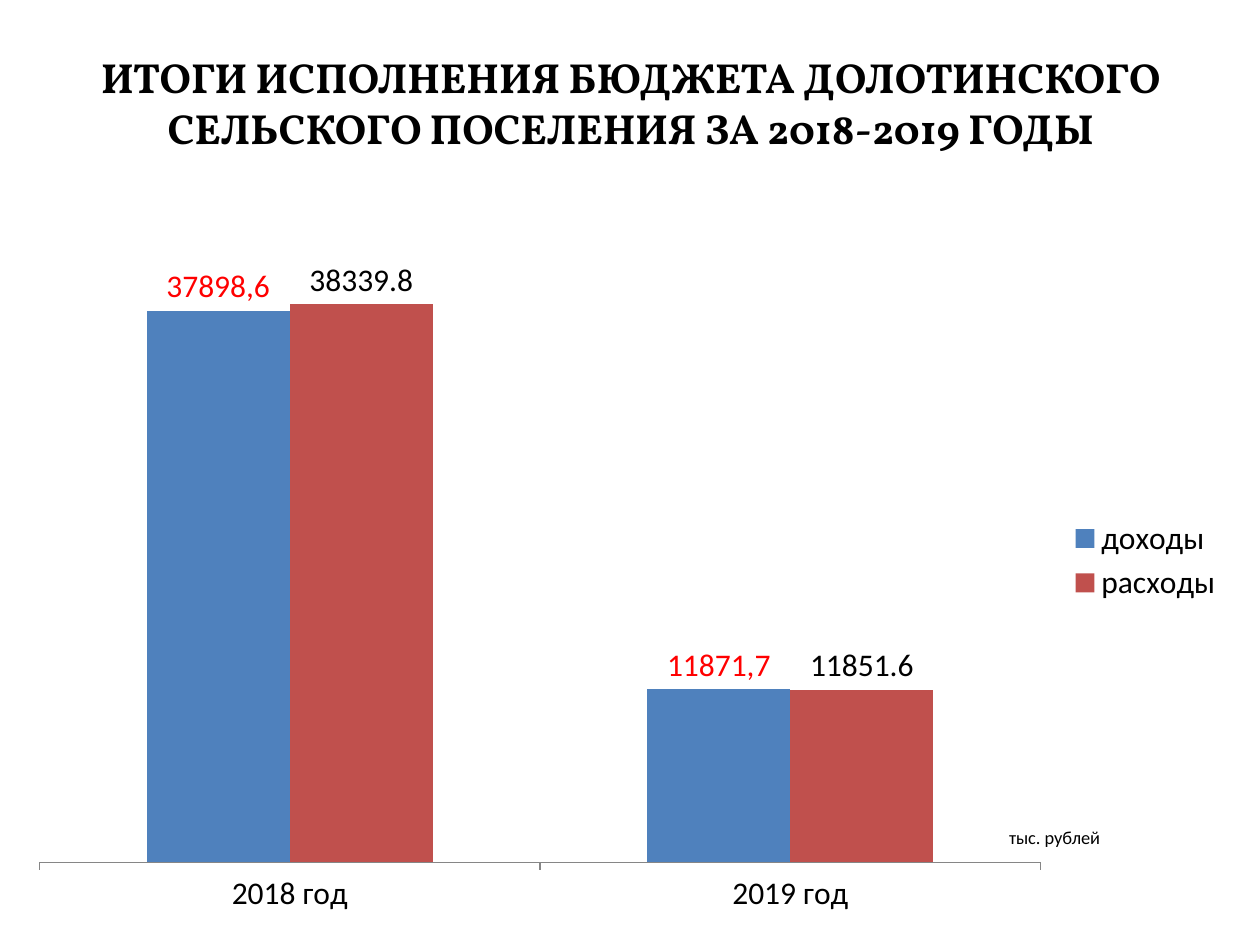
from lxml import etree
from pptx import Presentation
from pptx.chart.data import CategoryChartData
from pptx.dml.color import RGBColor
from pptx.enum.chart import XL_CHART_TYPE, XL_LABEL_POSITION, XL_LEGEND_POSITION, XL_TICK_MARK
from pptx.enum.text import MSO_ANCHOR, PP_ALIGN
from pptx.oxml.ns import qn
from pptx.util import Inches, Pt

CLUSTERED = XL_CHART_TYPE.COLUMN_CLUSTERED
OUTSIDE_END = XL_LABEL_POSITION.OUTSIDE_END
LEGEND_RIGHT = XL_LEGEND_POSITION.RIGHT
TICK_OUTSIDE = XL_TICK_MARK.OUTSIDE
TICK_NONE = XL_TICK_MARK.NONE
TOP = MSO_ANCHOR.TOP
LEFT, CENTER = PP_ALIGN.LEFT, PP_ALIGN.CENTER

BLACK = RGBColor(0x00, 0x00, 0x00)
RED = RGBColor(0xFF, 0x00, 0x00)
BLUE = RGBColor(0x4F, 0x81, 0xBD)
BRICK = RGBColor(0xC0, 0x50, 0x4D)
GRAY = RGBColor(0x86, 0x86, 0x86)

TITLE_FONT = {"name": "Vollkorn", "size": Pt(24), "bold": True}
CHART_FONT = {"name": "Calibri", "size": Pt(18), "bold": False}
UNIT_FONT = {"name": "Calibri", "size": Pt(10.5), "bold": False}

YEARS = ["2018 год", "2019 год"]
# name, values, bar colour, label colour, label texts
SERIES = [
    ("доходы", (37898.6, 11871.7), BLUE, RED, ("37898,6", "11871,7")),
    ("расходы", (38339.8, 11851.6), BRICK, BLACK, ()),
]
PLOT_LAYOUT = {"x": 0.02, "y": 0.02, "w": 0.82, "h": 0.89}


def format_font(font, values, color):
    for name, value in values.items():
        setattr(font, name, value)
    font.color.rgb = color


def write_text(shape, text, font_values, alignment):
    frame = shape.text_frame
    frame.word_wrap = True
    frame.vertical_anchor = TOP
    paragraph = frame.paragraphs[0]
    paragraph.alignment = alignment
    run = paragraph.add_run()
    run.text = text
    format_font(run.font, font_values, BLACK)


def add_title(slide, box):
    title = slide.shapes.title
    title.left, title.top, title.width, title.height = box
    write_text(title, "ИТОГИ ИСПОЛНЕНИЯ БЮДЖЕТА ДОЛОТИНСКОГО СЕЛЬСКОГО ПОСЕЛЕНИЯ "
               "ЗА 2018-2019 ГОДЫ", TITLE_FONT, CENTER)


def set_plot_layout(chart, layout_values):
    plot_area = chart.plots[0]._element.getparent()
    for old_layout in plot_area.findall(qn("c:layout")):
        plot_area.remove(old_layout)
    layout = etree.Element(qn("c:layout"))
    plot_area.insert(0, layout)
    manual = etree.SubElement(layout, qn("c:manualLayout"))
    settings = {"layoutTarget": "inner", "xMode": "edge", "yMode": "edge", **layout_values}
    for name, value in settings.items():
        etree.SubElement(manual, qn(f"c:{name}")).set("val", str(value))


def format_series(series, bar_color, label_color, label_texts):
    series.format.fill.solid()
    series.format.fill.fore_color.rgb = bar_color
    labels = series.data_labels
    labels.show_value = True
    labels.number_format = "0.0"
    labels.number_format_is_linked = False
    labels.position = OUTSIDE_END
    format_font(labels.font, CHART_FONT, label_color)
    for index, text in enumerate(label_texts):
        label = series.points[index].data_label
        run = label.text_frame.paragraphs[0].add_run()
        run.text = text
        format_font(run.font, CHART_FONT, label_color)
        label.position = OUTSIDE_END


def add_budget_chart(slide, box):
    data = CategoryChartData(number_format="0.0")
    data.categories = YEARS
    for name, values, *_ in SERIES:
        data.add_series(name, values)
    chart = slide.shapes.add_chart(CLUSTERED, *box, data).chart
    chart.has_title = False
    format_font(chart.font, CHART_FONT, BLACK)

    # Bars and their labels
    plot = chart.plots[0]
    plot.vary_by_categories = False
    plot.gap_width = 150
    plot.overlap = 0
    for series, (_, _, *formats) in zip(plot.series, SERIES):
        format_series(series, *formats)
    set_plot_layout(chart, PLOT_LAYOUT)

    # Axes
    category_axis = chart.category_axis
    category_axis.major_tick_mark = TICK_OUTSIDE
    category_axis.minor_tick_mark = TICK_NONE
    category_axis.format.line.color.rgb = GRAY
    value_axis = chart.value_axis
    value_axis.minimum_scale = 0
    value_axis.maximum_scale = 45000
    value_axis.has_major_gridlines = False
    value_axis.visible = False

    # Legend
    chart.has_legend = True
    chart.legend.position = LEGEND_RIGHT
    chart.legend.include_in_layout = False


def add_unit_note(slide, box):
    write_text(slide.shapes.add_textbox(*box), "тыс. рублей", UNIT_FONT, LEFT)


def box_in_inches(*lengths):
    return [Inches(length) for length in lengths]


def main():
    presentation = Presentation()
    presentation.slide_width = Inches(10)
    presentation.slide_height = Inches(7.5)
    slide = presentation.slides.add_slide(presentation.slide_layouts[5])
    add_title(slide, box_in_inches(0.44, 0.36, 9.13, 1.31))
    add_budget_chart(slide, box_in_inches(0.12, 1.53, 9.69, 5.84))
    add_unit_note(slide, box_in_inches(7.91, 6.51, 1.89, 0.28))
    presentation.save("out.pptx")


if __name__ == "__main__":
    main()
